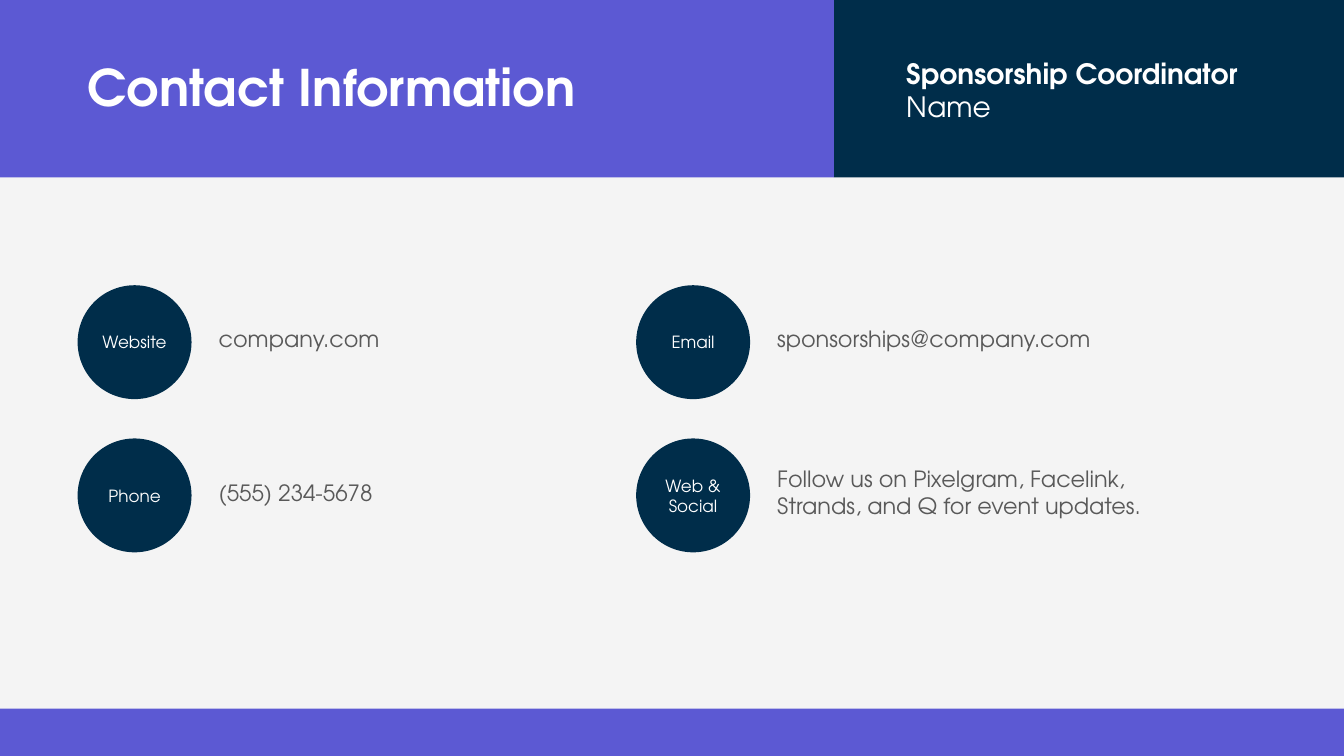
from pptx import Presentation
from pptx.dml.color import RGBColor
from pptx.enum.shapes import MSO_SHAPE as Shape
from pptx.enum.text import MSO_ANCHOR as Anchor, PP_ALIGN as Align
from pptx.util import Inches, Pt

NAVY = RGBColor(0x00, 0x2D, 0x4A)
PURPLE = RGBColor(0x5C, 0x59, 0xD3)
PALE = RGBColor(0xF4, 0xF4, 0xF4)
GRAY = RGBColor(0x59, 0x59, 0x59)
WHITE = RGBColor(0xFF, 0xFF, 0xFF)
FONT = "TeX Gyre Adventor"

WIDTH, HEIGHT = 13.33, 7.5
CIRCLE = 1.13
COLUMNS = (0.77, 6.31)
FIRST_ROW, ROW_STEP = 2.83, 1.52

# Label, detail, width and height of the detail; each inner tuple is one row
CONTACTS = (
    (("Website", "company.com", 3.38, 0.37),
     ("Email", "sponsorships@company.com", 5.16, 0.37)),
    (("Phone", "(555) 234-5678", 2.71, 0.37),
     ("Web & Social",
      "Follow us on Pixelgram, Facelink, Strands, and Q for event updates.",
      4.35, 0.64)),
)


def add_block(slide, kind, left, top, width, height, color):
    shape = slide.shapes.add_shape(
        kind, Inches(left), Inches(top), Inches(width), Inches(height))
    shape.shadow.inherit = False
    shape.fill.solid()
    shape.fill.fore_color.rgb = color
    shape.line.fill.background()
    return shape


def style(paragraph, text, size, color, bold=False):
    paragraph.text = text
    font = paragraph.font
    font.name, font.size, font.bold = FONT, Pt(size), bold
    font.color.rgb = color


def add_text(slide, left, top, width, height, lines, size, color):
    """Place one paragraph per (text, bold) pair."""
    box = slide.shapes.add_textbox(
        Inches(left), Inches(top), Inches(width), Inches(height))
    frame = box.text_frame
    frame.word_wrap = True
    for index, (text, bold) in enumerate(lines):
        paragraph = frame.add_paragraph() if index else frame.paragraphs[0]
        style(paragraph, text, size, color, bold)


def add_header(slide, left, top, width, height):
    split = 8.27
    add_block(slide, Shape.RECTANGLE, left + split, top, width - split, height, NAVY)
    add_block(slide, Shape.RECTANGLE, left, top, split, height, PURPLE)
    add_text(slide, left + 0.77, top + 0.52, 5.66, 0.71,
             [("Contact Information", True)], 36, WHITE)
    add_text(slide, left + split + 0.62, top + 0.52, 3.94, 0.77,
             [("Sponsorship Coordinator", True), ("Name", False)], 20, WHITE)


def add_contact(slide, left, top, label, detail, width, height):
    # Circle with its label
    circle = add_block(slide, Shape.OVAL, left, top, CIRCLE, CIRCLE, NAVY)
    frame = circle.text_frame
    frame.word_wrap = True
    frame.margin_left = frame.margin_right = 0
    frame.vertical_anchor = Anchor.MIDDLE
    style(frame.paragraphs[0], label, 12, WHITE)
    frame.paragraphs[0].alignment = Align.CENTER
    # Detail beside the circle
    detail_top = top + (CIRCLE - height) / 2 - 0.03
    add_text(slide, left + CIRCLE + 0.17, detail_top, width, height,
             [(detail, False)], 16, GRAY)


def add_footer(slide, left, top, width, height):
    add_block(slide, Shape.RECTANGLE, left, top, width, height, PURPLE)


def main():
    presentation = Presentation()
    presentation.slide_width = Inches(WIDTH)
    presentation.slide_height = Inches(HEIGHT)
    slide = presentation.slides.add_slide(presentation.slide_layouts[6])
    slide.background.fill.solid()
    slide.background.fill.fore_color.rgb = PALE

    add_header(slide, 0, -0.01, WIDTH, 1.77)
    for row, contacts in enumerate(CONTACTS):
        for left, contact in zip(COLUMNS, contacts):
            add_contact(slide, left, FIRST_ROW + row * ROW_STEP, *contact)
    add_footer(slide, 0, 7.03, WIDTH, 0.47)
    presentation.save("out.pptx")


if __name__ == "__main__":
    main()
